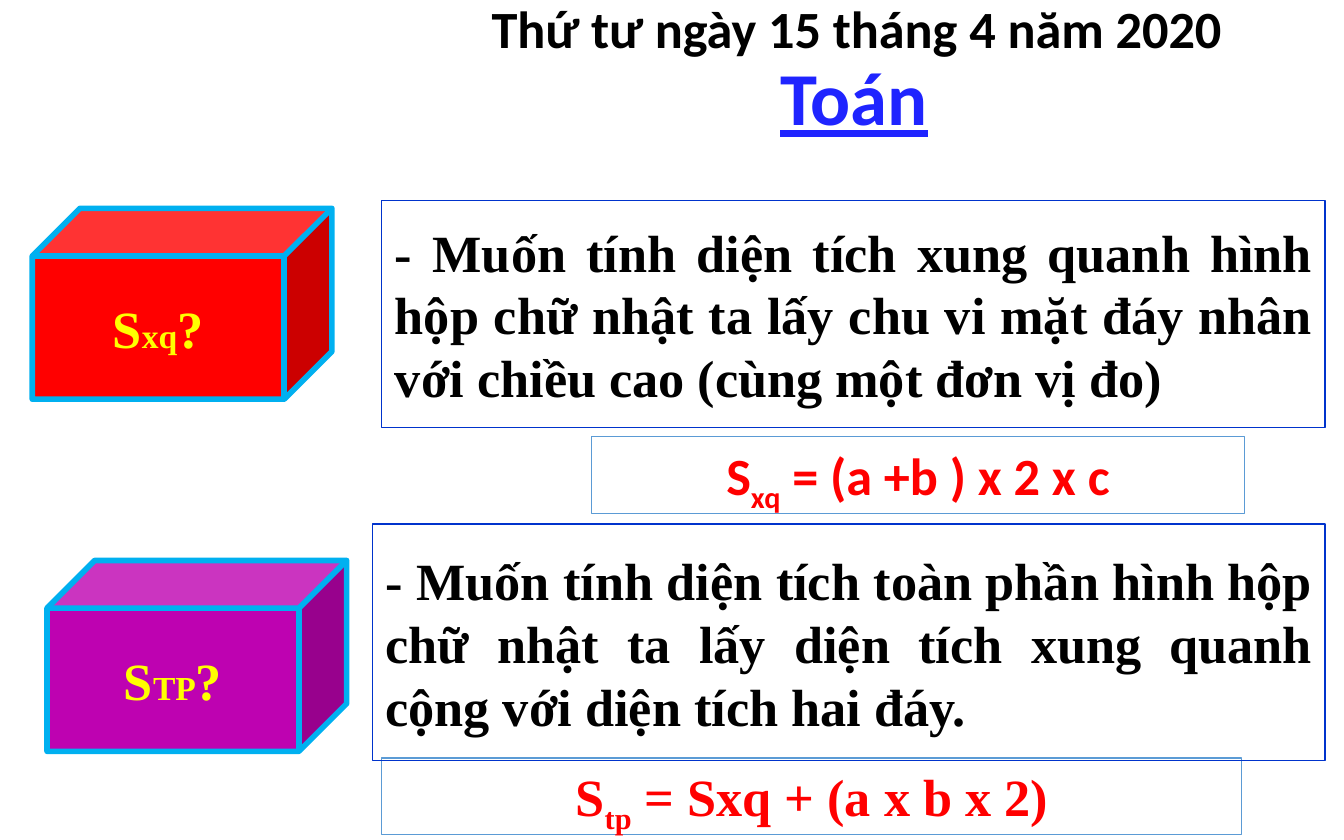
from pptx import Presentation
from pptx import util as u
from pptx.dml.color import RGBColor
from pptx.enum import shapes, text

SERIF, SANS = "Times New Roman", "Calibri"
ALIGN, ANCHOR = text.PP_ALIGN, text.MSO_ANCHOR


def rgb(value):
    return RGBColor.from_string(value)


def write(sp, *runs, font=SERIF, color="000000", size=28, align=ALIGN.CENTER,
          anchor=ANCHOR.TOP, underline=None):
    tf = sp.text_frame
    tf.word_wrap = True
    tf.auto_size = text.MSO_AUTO_SIZE.NONE
    tf.vertical_anchor = anchor
    p = tf.paragraphs[0]
    p.alignment = align
    for words, fmt in runs:
        r = p.add_run()
        r.text = words
        r.font.name = font
        r.font.size = u.Pt(fmt.get("size", size))
        r.font.bold = True
        r.font.underline = underline
        r.font.color.rgb = rgb(color)
        if "baseline" in fmt:
            r._r.get_or_add_rPr().set("baseline", str(fmt["baseline"] * 1000))


def add_box(s, box, line, width=0.75, fill=None, kind=shapes.MSO_SHAPE.RECTANGLE):
    sp = s.shapes.add_shape(kind, *map(u.Inches, box))
    sp.shadow.inherit = False
    sp.line.color.rgb = rgb(line)
    sp.line.width = u.Pt(width)
    if fill:
        sp.fill.solid()
        sp.fill.fore_color.rgb = rgb(fill)
    else:
        sp.fill.background()
    return sp


def add_header(s, title_box, date_box):
    title = s.shapes.title
    title.left, title.top, title.width, title.height = map(u.Inches, title_box)
    write(title, ("Toán", {}), font=SANS, color="1F24FF", size=40,
          anchor=ANCHOR.MIDDLE, underline=True)
    date = s.shapes.add_textbox(*map(u.Inches, date_box))
    write(date, ("Thứ tư ngày 15 tháng 4 năm 2020", {}), font=SANS, align=ALIGN.LEFT)


def add_cuboid(s, box, fill, label):
    sp = add_box(s, box, "00B0F0", 3, fill, shapes.MSO_SHAPE.CUBE)
    write(sp, ("S", {}), (label, {"size": 18}), ("?", {}),
          color="FFFF00", anchor=ANCHOR.MIDDLE)


def add_rule(s, box, words):
    write(add_box(s, box, "0033CC"), (words, {}),
          align=ALIGN.JUSTIFY, anchor=ANCHOR.MIDDLE)


def add_formula(s, box, sub, rest, font):
    write(add_box(s, box, "5B9BD5"), ("S", {}), (sub, {"baseline": -25}),
          (rest, {}), font=font, color="FF0000")


def main():
    prs = Presentation()
    prs.slide_width, prs.slide_height = u.Inches(10), u.Inches(6.25)
    s = prs.slides.add_slide(prs.slide_layouts[5])

    add_header(s, (5.02, 0.33, 2.67, 0.77), (3.56, -0.08, 5.87, 0.57))

    add_formula(s, (2.84, 5.64, 6.4, 0.57), "tp", " = Sxq + (a x b x 2)", SERIF)
    add_rule(s, (2.84, 1.49, 7.02, 1.69),
             "- Muốn tính diện tích xung quanh hình hộp chữ nhật ta lấy "
             "chu vi mặt đáy nhân với chiều cao (cùng một đơn vị đo)")
    add_rule(s, (2.77, 3.9, 7.09, 1.76),
             "- Muốn tính diện tích toàn phần hình hộp chữ nhật ta lấy "
             "diện tích xung quanh cộng với diện tích hai đáy.")
    add_formula(s, (4.4, 3.25, 4.86, 0.57), "xq", " = (a +b ) x 2 x c", SANS)

    add_cuboid(s, (0.24, 1.55, 2.23, 1.42), "FF0000", "xq")
    add_cuboid(s, (0.35, 4.17, 2.23, 1.42), "BE02B1", "TP")

    prs.save("out.pptx")


if __name__ == "__main__":
    main()
